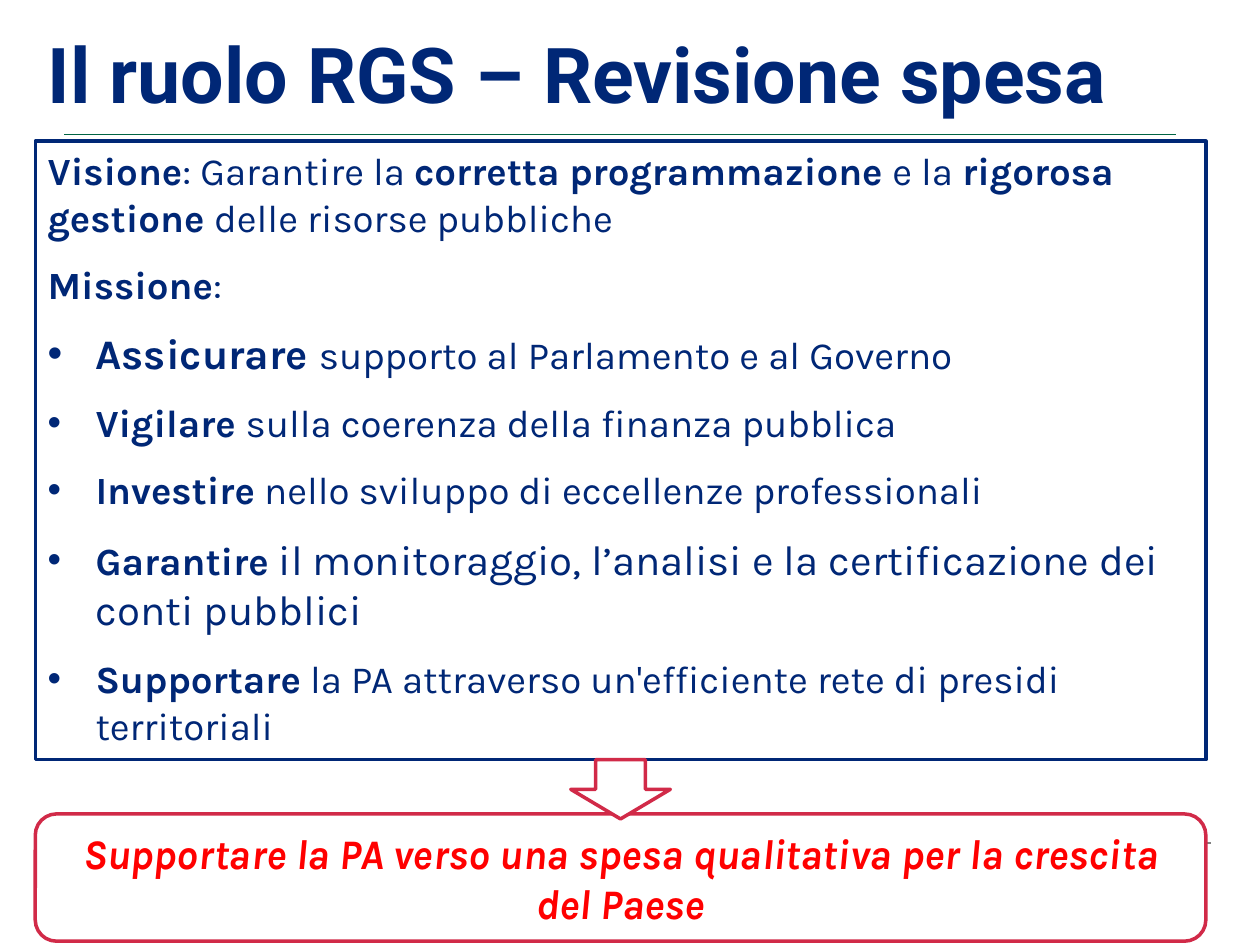
from dataclasses import dataclass

import pptx
import pptx.dml.color
import pptx.enum.shapes
import pptx.enum.text
import pptx.oxml
import pptx.oxml.ns
import pptx.util
from lxml import etree

SHAPE = pptx.enum.shapes.MSO_SHAPE
ANCHOR = pptx.enum.text.MSO_ANCHOR
ALIGN = pptx.enum.text.PP_ALIGN

COLUMNS, ROWS = 100, 75
NAVY, CRIMSON, RED, GREEN, GREY, WHITE = (
    "002776", "D12A48", "FF0000", "006442", "808080", "FFFFFF")

prs = pptx.Presentation()
prs.slide_width = pptx.util.Inches(10)
prs.slide_height = pptx.util.Inches(7.5)
s = prs.slides.add_slide(prs.slide_layouts[6])


@dataclass
class Box:
    """Place on the grid, in columns and rows."""
    left: float
    top: float
    width: float
    height: float


@dataclass
class Run:
    text: str
    bold: bool = False
    size: float = 22
    font: str = "Karla"
    colour: str = NAVY
    italic: bool = False


@dataclass
class Paragraph:
    runs: list[Run]
    bullet: bool = False
    space_after: float = 12
    align: ALIGN = ALIGN.LEFT


def col(n: float) -> int:
    return round(prs.slide_width * n / COLUMNS)


def row(n: float) -> int:
    return round(prs.slide_height * n / ROWS)


def rgb(colour: str) -> pptx.dml.color.RGBColor:
    return pptx.dml.color.RGBColor.from_string(colour)


def place(box: Box) -> tuple[int, int, int, int]:
    return col(box.left), row(box.top), col(box.width), row(box.height)


def add_rule(left: float, right: float, y: float, colour: str) -> None:
    line = s.shapes.add_connector(
        pptx.enum.shapes.MSO_CONNECTOR.STRAIGHT, col(left), row(y), col(right), row(y))
    line.line.color.rgb = rgb(colour)
    line.line.width = pptx.util.Pt(0.75)
    etree.SubElement(line._element.spPr, pptx.oxml.ns.qn("a:effectLst"))


def add_outlined(kind: SHAPE, box: Box, colour: str):
    sp = s.shapes.add_shape(kind, *place(box))
    sp.shadow.inherit = False
    sp.fill.solid()
    sp.fill.fore_color.rgb = rgb(WHITE)
    sp.line.color.rgb = rgb(colour)
    sp.line.width = pptx.util.Pt(2)
    return sp


def add_bullet(p) -> None:
    pPr = p._p.get_or_add_pPr()
    indent = pptx.util.Inches(0.38)
    pPr.set("marL", str(indent))
    pPr.set("indent", str(-indent))
    etree.SubElement(pPr, pptx.oxml.ns.qn("a:buFont"), typeface="Arial")
    etree.SubElement(pPr, pptx.oxml.ns.qn("a:buChar"), char="•")


def write(sp, paragraphs: list[Paragraph], anchor: ANCHOR = ANCHOR.TOP) -> None:
    tf = sp.text_frame
    tf.word_wrap = True
    tf.auto_size = pptx.enum.text.MSO_AUTO_SIZE.SHAPE_TO_FIT_TEXT
    tf.vertical_anchor = anchor
    for i, paragraph in enumerate(paragraphs):
        p = tf.add_paragraph() if i else tf.paragraphs[0]
        if paragraph.bullet:
            add_bullet(p)
        p.alignment = paragraph.align
        p.space_after = pptx.util.Pt(paragraph.space_after)
        for run in paragraph.runs:
            r = p.add_run()
            r.text = run.text
            r.font.name = run.font
            r.font.size = pptx.util.Pt(run.size)
            r.font.bold = run.bold
            r.font.italic = run.italic
            r.font.color.rgb = rgb(run.colour)


def mission(verb: str, rest: str, verb_size: float = 22, rest_size: float = 22) -> Paragraph:
    return Paragraph([Run(verb, True, verb_size), Run(rest, size=rest_size)], bullet=True)


vision_and_mission = [
    Paragraph([
        Run("Visione", True),
        Run(": Garantire la "),
        Run("corretta programmazione ", True),
        Run("e la "),
        Run("rigorosa gestione ", True),
        Run("delle risorse pubbliche"),
    ]),
    Paragraph([Run("Missione", True), Run(":")]),
    mission("Assicurare ", "supporto al Parlamento e al Governo", verb_size=24),
    mission("Vigilare ", "sulla coerenza della finanza pubblica"),
    mission("Investire", " nello sviluppo di eccellenze professionali"),
    mission("Garantire ", "il monitoraggio, l’analisi e la certificazione dei conti pubblici",
            rest_size=24),
    mission("Supportare", " la PA attraverso un'efficiente rete di presidi territoriali"),
]
goal = Run("Supportare la PA verso una spesa qualitativa per la crescita del Paese",
           True, 24, colour=RED, italic=True)
title = Run("Il ruolo RGS – Revisione spesa", True, 44, "Roboto")

add_rule(3.9, 96.1, 66.9, GREY)
write(add_outlined(SHAPE.RECTANGLE, Box(2.8, 11.2, 92.9, 49.1), NAVY), vision_and_mission)
write(add_outlined(SHAPE.ROUNDED_RECTANGLE, Box(2.8, 64.6, 92.9, 10.1), CRIMSON),
      [Paragraph([goal], space_after=0, align=ALIGN.CENTER)], ANCHOR.MIDDLE)
add_outlined(SHAPE.DOWN_ARROW, Box(45.3, 60.3, 7.9, 4.7), CRIMSON)
add_rule(5.1, 93.3, 10.7, GREEN)
write(s.shapes.add_textbox(*place(Box(2.8, 1.6, 93.7, 8.4))),
      [Paragraph([title], space_after=0)])

prs.save("out.pptx")
